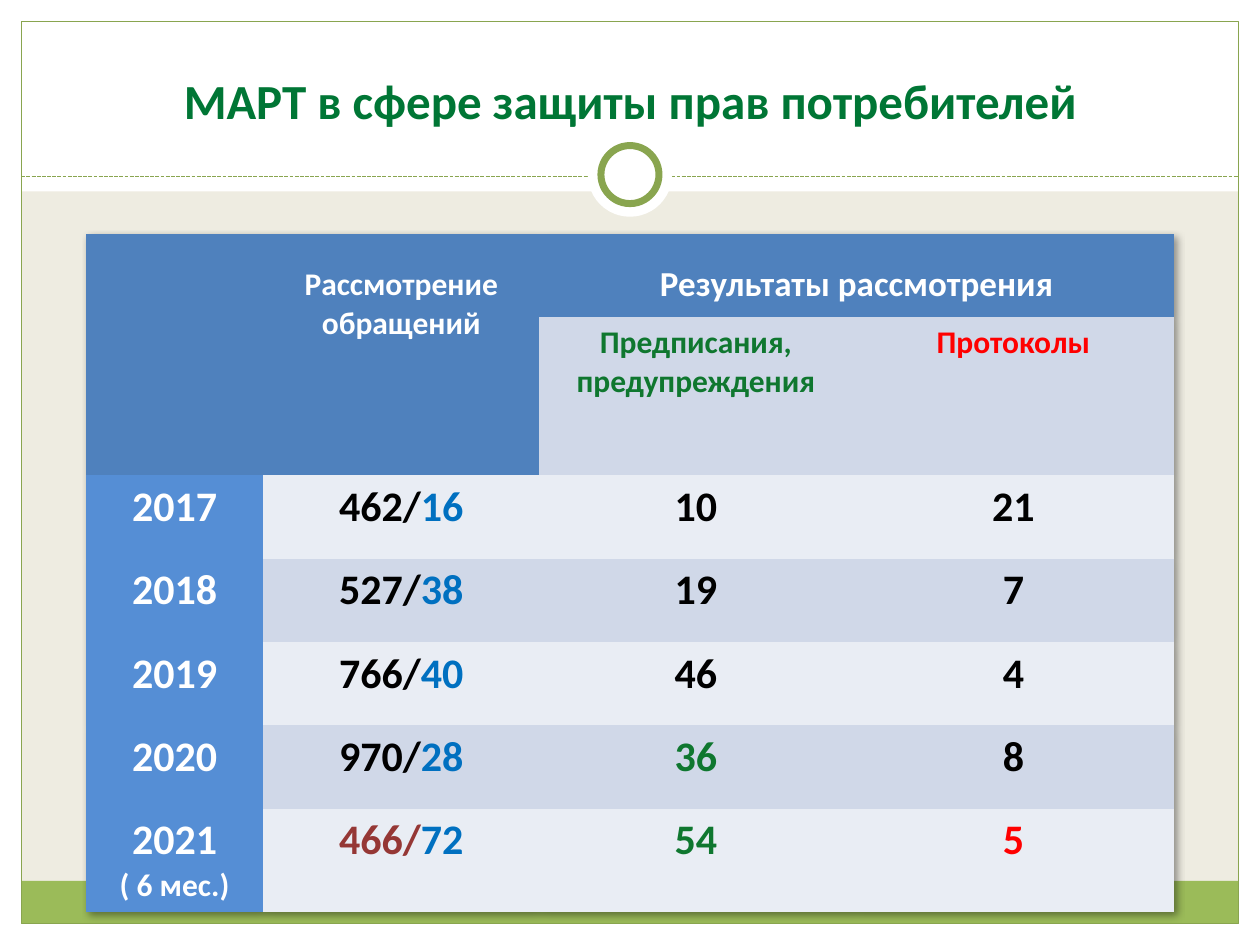
from collections import namedtuple

from lxml import etree
from pptx import Presentation
from pptx import util as u
from pptx.dml.color import RGBColor
from pptx.enum import dml, shapes, text
from pptx.oxml import parse_xml
from pptx.oxml.ns import nsdecls, qn

WHITE = RGBColor(0xFF, 0xFF, 0xFF)
BLACK = RGBColor(0x00, 0x00, 0x00)
CREAM = RGBColor(0xEE, 0xEC, 0xE1)
GREEN = RGBColor(0x9B, 0xBB, 0x59)
OLIVE = RGBColor(0x89, 0xA5, 0x4F)
TITLE_GREEN = RGBColor(0x00, 0x76, 0x35)
TEXT_GREEN = RGBColor(0x0F, 0x77, 0x2F)
RED = RGBColor(0xFF, 0x00, 0x00)
MAROON = RGBColor(0x95, 0x37, 0x35)
BLUE = RGBColor(0x00, 0x70, 0xC0)
HEADER_BLUE = RGBColor(0x4F, 0x81, 0xBD)
YEAR_BLUE = RGBColor(0x55, 0x8E, 0xD5)
BAND_DARK = RGBColor(0xD0, 0xD8, 0xE8)
BAND_LIGHT = RGBColor(0xE9, 0xED, 0xF4)

FONT = "Calibri"
NO_STYLE = "{2D5ABB26-0587-4C30-8999-92F81FD0307C}"
SHADOW = (
    f'<a:effectLst {nsdecls("a")}>'
    '<a:outerShdw blurRad="50800" dist="38100" dir="2700000" algn="tl">'
    '<a:srgbClr val="000000"><a:alpha val="40000"/></a:srgbClr>'
    "</a:outerShdw></a:effectLst>"
)

COLUMNS = (3.58, 5.56, 6.32, 6.48)
ROWS = (1.68, 3.18, 1.68, 1.68, 1.68, 1.68, 2.08)
RESULTS = (
    ("2017", ("462/", BLACK), "16", ("10", BLACK), ("21", BLACK)),
    ("2018", ("527/", BLACK), "38", ("19", BLACK), ("7", BLACK)),
    ("2019", ("766/", BLACK), "40", ("46", BLACK), ("4", BLACK)),
    ("2020", ("970/", BLACK), "28", ("36", TEXT_GREEN), ("8", BLACK)),
    ("2021", ("466/", MAROON), "72", ("54", TEXT_GREEN), ("5", RED)),
)

Box = namedtuple("Box", "left top width height")


def cm(*lengths):
    return [u.Cm(length) for length in lengths]


def add_block(page, kind, box, fill=None, line=None, weight=0.75):
    block = page.shapes.add_shape(kind, *cm(*box))
    block.shadow.inherit = False
    if fill is None:
        block.fill.background()
    else:
        block.fill.solid()
        block.fill.fore_color.rgb = fill
    if line is None:
        block.line.fill.background()
    else:
        block.line.color.rgb = line
        block.line.width = u.Pt(weight)


def add_frame(page, box):
    margin, header, footer = 0.43, 3.86, 0.86
    rectangle = shapes.MSO_SHAPE.RECTANGLE
    right = box.left + box.width
    bottom = box.top + box.height
    inner = box.width - 2 * margin
    for edge in (
        Box(box.left, bottom - margin, box.width, margin),
        Box(box.left, box.top, box.width, header),
        Box(box.left, box.top, margin, box.height),
        Box(right - margin, box.top, margin, box.height),
    ):
        add_block(page, rectangle, edge, WHITE)
    add_block(page, rectangle,
              Box(box.left + margin, bottom - margin - footer, inner, footer), GREEN)
    add_block(page, rectangle,
              Box(box.left + margin, box.top + margin, inner, box.height - 2 * margin),
              line=OLIVE)


def add_divider(page, box):
    middle = box.top + box.height / 2
    rule = page.shapes.add_connector(
        shapes.MSO_CONNECTOR.STRAIGHT,
        *cm(box.left, middle, box.left + box.width, middle))
    rule.line.color.rgb = OLIVE
    rule.line.width = u.Pt(0.75)
    rule.line.dash_style = dml.MSO_LINE.SQUARE_DOT
    etree.SubElement(rule.element.spPr, qn("a:effectLst"))
    center = box.left + box.width / 2
    ring_middle = middle - 0.04
    for size, line in ((1.7, None), (1.17, OLIVE)):
        ring = Box(center - size / 2, ring_middle - size / 2, size, size)
        add_block(page, shapes.MSO_SHAPE.OVAL, ring, WHITE, line, 4)


def style_para(para, size, color=None):
    para.alignment = text.PP_ALIGN.CENTER
    para.font.name = FONT
    para.font.size = u.Pt(size)
    para.font.bold = True
    if color is not None:
        para.font.color.rgb = color


def place_title(page, box):
    title = page.shapes.title
    title.left, title.top, title.width, title.height = cm(*box)
    title.text_frame.text = "МАРТ в сфере защиты прав потребителей"
    title.text_frame.vertical_anchor = text.MSO_ANCHOR.BOTTOM
    style_para(title.text_frame.paragraphs[0], 28, TITLE_GREEN)
    title.element.getparent().append(title.element)


def fill_cell(cell, fill, words="", size=24, color=BLACK, top=0.13):
    cell.fill.solid()
    cell.fill.fore_color.rgb = fill
    cell.margin_top = u.Cm(top)
    para = cell.text_frame.paragraphs[0]
    para.text = words
    style_para(para, size, color)


def add_pair(cell, fill, total, extra):
    fill_cell(cell, fill)
    para = cell.text_frame.paragraphs[0]
    for words, color in (total, (extra, BLUE)):
        span = para.add_run()
        span.text = words
        span.font.color.rgb = color


def add_results(page, box):
    frame = page.shapes.add_table(len(ROWS), len(COLUMNS), *cm(*box))
    table = frame.table
    table.first_row = table.horz_banding = False
    properties = table._tbl.tblPr
    properties.find(qn("a:tableStyleId")).text = NO_STYLE
    properties.insert(0, parse_xml(SHADOW))
    for column, width in zip(table.columns, COLUMNS):
        column.width = u.Cm(width)
    for row, height in zip(table.rows, ROWS):
        row.height = u.Cm(height)

    cell = table.cell
    for column in (0, 1):
        cell(0, column).merge(cell(1, column))
        fill_cell(cell(1, column), HEADER_BLUE)
    cell(0, 2).merge(cell(0, 3))
    fill_cell(cell(0, 3), HEADER_BLUE)
    fill_cell(cell(0, 0), HEADER_BLUE)
    fill_cell(cell(0, 1), HEADER_BLUE, "Рассмотрение обращений", 18, WHITE, 0.64)
    fill_cell(cell(0, 2), HEADER_BLUE, "Результаты рассмотрения", 20, WHITE, 0.58)
    fill_cell(cell(1, 2), BAND_DARK, "Предписания, предупреждения", 18, TEXT_GREEN)
    fill_cell(cell(1, 3), BAND_DARK, "Протоколы", 18, RED)

    for row, (year, total, extra, orders, protocols) in enumerate(RESULTS, 2):
        band = BAND_DARK if row % 2 else BAND_LIGHT
        fill_cell(cell(row, 0), YEAR_BLUE, year, color=WHITE)
        add_pair(cell(row, 1), band, total, extra)
        for column, (words, color) in ((2, orders), (3, protocols)):
            fill_cell(cell(row, column), band, words, color=color)
    note = cell(len(ROWS) - 1, 0).text_frame.add_paragraph()
    note.text = "( 6 мес.)"
    style_para(note, 18, WHITE)


def main():
    deck = Presentation()
    deck.slide_width, deck.slide_height = cm(25.4, 19.05)
    page = deck.slides.add_slide(deck.slide_layouts[5])
    page.background.fill.solid()
    page.background.fill.fore_color.rgb = CREAM
    add_frame(page, Box(0, 0, 25.4, 19.05))
    add_divider(page, Box(0.43, 2.71, 24.54, 1.7))
    place_title(page, Box(0.85, 0.64, 23.7, 2.1))
    add_results(page, Box(1.73, 4.72, sum(COLUMNS), sum(ROWS)))
    deck.save("out.pptx")


if __name__ == "__main__":
    main()
